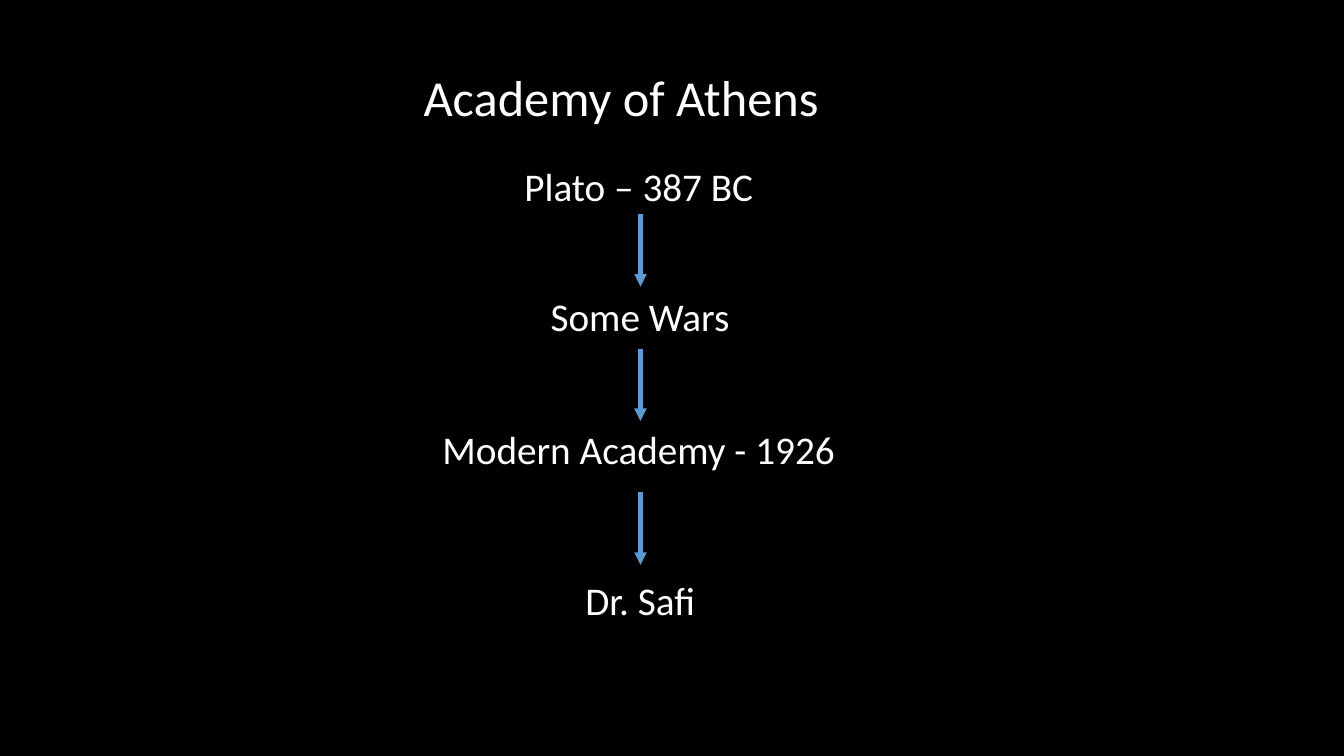
from lxml.etree import SubElement
from pptx import Presentation
from pptx.dml.color import RGBColor
from pptx.enum.shapes import MSO_CONNECTOR
from pptx.enum.text import MSO_AUTO_SIZE
from pptx.oxml.ns import qn
from pptx.util import Pt

PX = 9525  # 96 px to the inch
BLACK = RGBColor(0x00, 0x00, 0x00)
WHITE = RGBColor(0xFF, 0xFF, 0xFF)
BLUE = RGBColor(0x5B, 0x9B, 0xD5)

AXIS = 610
STAGE_HEIGHT = 55
ARROW_LENGTH = 69
STAGES = [
    ("Plato – 387 BC", 150, 240),
    ("Some Wars", 274, 191),
    ("Modern Academy - 1926", 400, 397),
    ("Dr. Safi", 544, 125),
]
ARROW_TOPS = [204, 332, 469]


def add_label(text, left, top, width, height, size, wrap):
    box = page.shapes.add_textbox(left * PX, top * PX, width * PX, height * PX)
    frame = box.text_frame
    frame.text = text
    frame.word_wrap = wrap
    frame.auto_size = MSO_AUTO_SIZE.SHAPE_TO_FIT_TEXT
    font = frame.paragraphs[0].runs[0].font
    font.name = "Calibri"
    font.size = Pt(size)
    font.color.rgb = WHITE


deck = Presentation()
deck.slide_width = 1280 * PX
deck.slide_height = 720 * PX
page = deck.slides.add_slide(deck.slide_layouts[6])
page.background.fill.solid()
page.background.fill.fore_color.rgb = BLACK

add_label("Academy of Athens", 394, 58, 431, 68, 36, True)
for text, top, width in STAGES:
    add_label(text, AXIS - width // 2, top, width, STAGE_HEIGHT, 28, False)

for top in ARROW_TOPS:
    arrow = page.shapes.add_connector(
        MSO_CONNECTOR.STRAIGHT, AXIS * PX, top * PX, AXIS * PX, (top + ARROW_LENGTH) * PX
    )
    arrow.line.color.rgb = BLUE
    arrow.line.width = Pt(3)
    SubElement(arrow.line._get_or_add_ln(), qn("a:tailEnd"), type="triangle")
    SubElement(arrow._element.spPr, qn("a:effectLst"))

deck.save("out.pptx")
